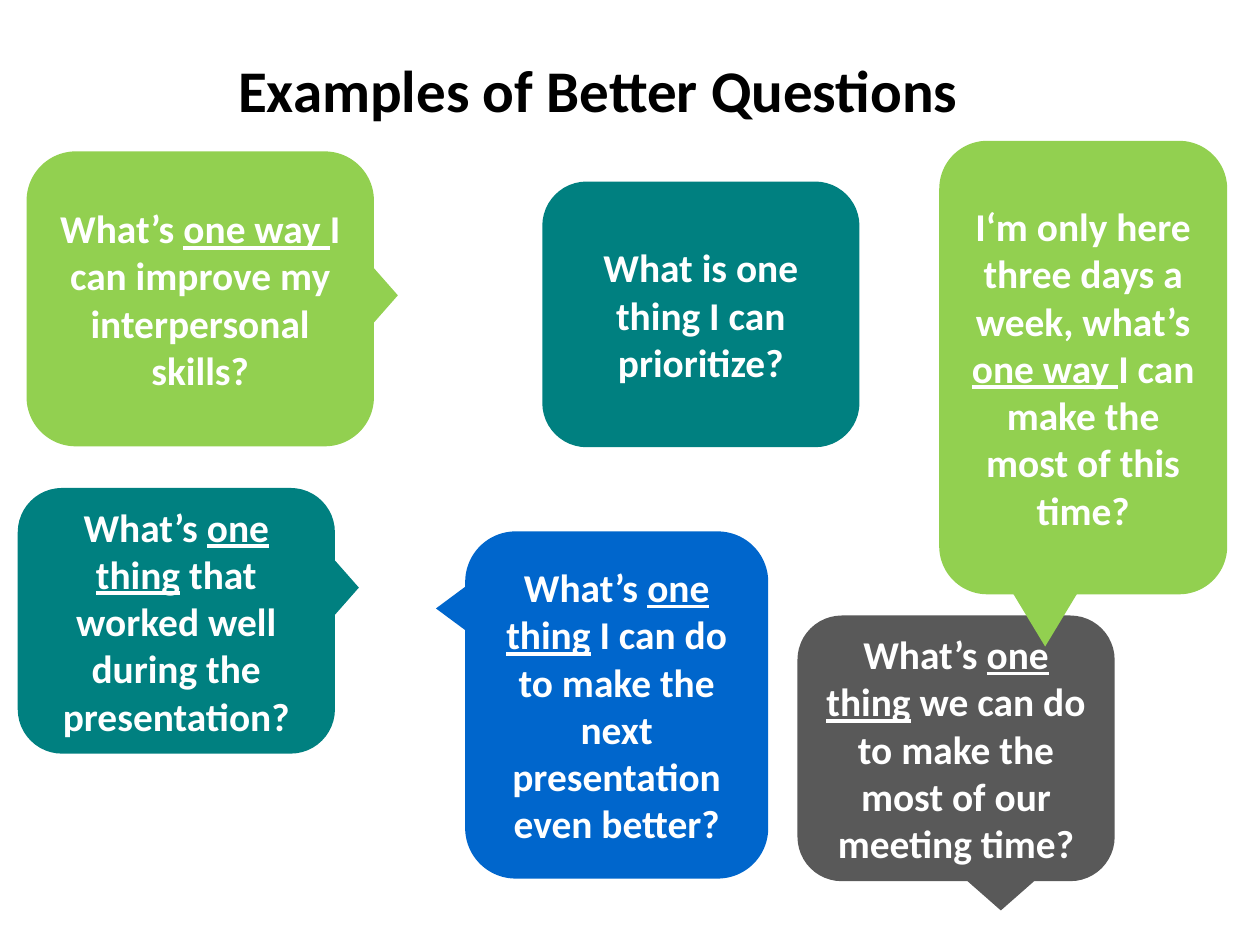
from pptx import Presentation
from pptx.dml.color import RGBColor as Rgb
from pptx.enum.shapes import MSO_SHAPE as Kind
from pptx.enum.text import MSO_ANCHOR as Anchor, PP_ALIGN as Align
from pptx.util import Inches, Pt

LIME, TEAL, BLUE, GRAY = "92D050", "008080", "0066CC", "595959"
WHITE, BLACK = "FFFFFF", "000000"


def tint(code):
    return Rgb.from_string(code)


class Board:
    font = "Calibri"
    size = 32

    def __init__(self, slide):
        self.slide = slide

    def label(self, frame, runs, size, color):
        frame.word_wrap = True
        para = frame.paragraphs[0]
        para.alignment = Align.CENTER
        for text, under in runs:
            run = para.add_run()
            run.text = text
            font = run.font
            font.name, font.size, font.bold = self.font, Pt(size), True
            font.color.rgb = tint(color)
            font.underline = under

    def title(self, box, text):
        area = self.slide.shapes.add_textbox(*map(Inches, box))
        self.label(area.text_frame, [(text, False)], 48, BLACK)

    def shape(self, home, kind, box, fill, turn=0):
        item = home.add_shape(kind, *map(Inches, box))
        item.shadow.inherit = False
        item.fill.solid()
        item.fill.fore_color.rgb = tint(fill)
        item.line.fill.background()
        item.rotation = turn
        return item

    def bubble(self, box, fill, runs, tail=None, turn=0):
        home = self.slide.shapes
        if tail:
            home = home.add_group_shape().shapes
        body = self.shape(home, Kind.ROUNDED_RECTANGLE, box, fill)
        body.text_frame.vertical_anchor = Anchor.MIDDLE
        self.label(body.text_frame, runs, self.size, WHITE)
        if tail:
            self.shape(home, Kind.ISOSCELES_TRIANGLE, tail, fill, turn)


def ask(start, key, rest):
    return [(start, False), (key, True), (rest, False)]


def main():
    deck = Presentation()
    deck.slide_width, deck.slide_height = Inches(14.22), Inches(10.67)
    board = Board(deck.slides.add_slide(deck.slide_layouts[6]))

    what, thing, way = "What’s ", "one thing", "one way "
    board.bubble((0.2, 5.51, 3.58, 3), TEAL,
                 ask(what, thing, " that worked well during the presentation?"),
                 (3.51, 6.47, 0.75, 0.33), 90)
    board.bubble((9, 6.95, 3.58, 3), GRAY,
                 ask(what, thing, " we can do to make the most of our meeting time?"),
                 (10.92, 9.95, 0.75, 0.33), 180)
    board.bubble((5.25, 6, 3.42, 3.92), BLUE,
                 ask(what, thing, " I can do to make the next presentation even better?"),
                 (4.77, 6.56, 0.92, 0.62), 270)
    board.bubble((0.3, 1.71, 3.92, 3.33), LIME,
                 ask(what, way, "I can improve my interpersonal skills?"),
                 (3.95, 3.17, 0.75, 0.33), 90)
    board.title((-0.22, 0.56, 13.94, 1.78), "Examples of Better Questions")
    board.bubble((6.12, 2.05, 3.58, 3), TEAL,
                 [("What is one thing I can prioritize?", False)])
    board.bubble((10.6, 1.59, 3.25, 5.12), LIME,
                 ask("I‘m only here three days a week, what’s ", way,
                     "I can make the most of this time?"),
                 (11.42, 6.68, 0.75, 0.62), 180)

    deck.save("out.pptx")


if __name__ == "__main__":
    main()
